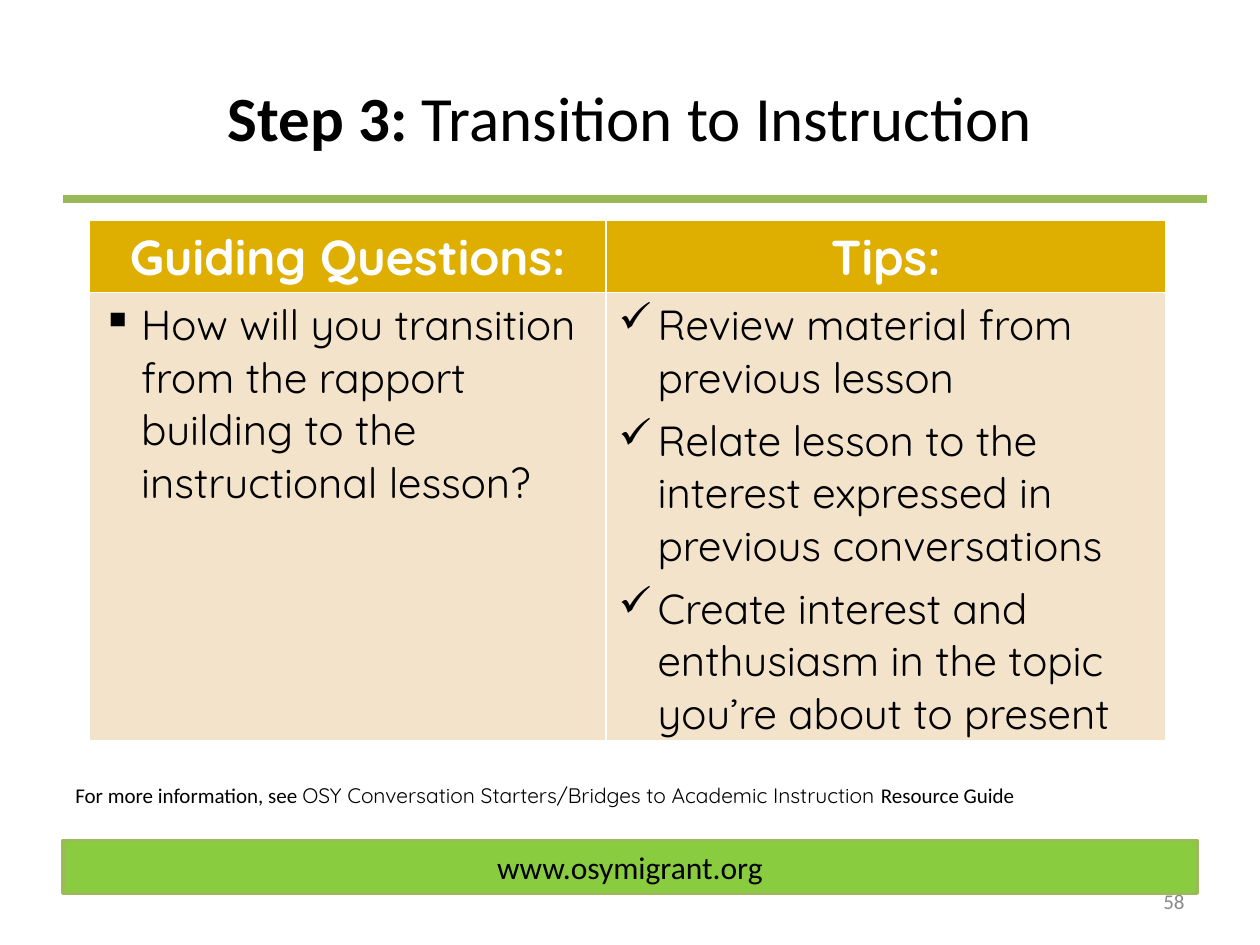
from lxml.etree import SubElement as Sub
from pptx import Presentation
from pptx.dml.color import RGBColor as RGB
from pptx.enum.shapes import MSO_CONNECTOR as Link, MSO_SHAPE as Shape
from pptx.enum.text import MSO_ANCHOR as Anchor, PP_ALIGN as Align
from pptx.oxml.ns import qn
from pptx.util import Inches, Pt

BLACK = RGB(0x00, 0x00, 0x00)
WHITE = RGB(0xFF, 0xFF, 0xFF)
GRAY = RGB(0x89, 0x89, 0x89)
RULE = RGB(0x98, 0xB9, 0x55)
GREEN = RGB(0x89, 0xCC, 0x40)
EDGE = RGB(0x9B, 0xBB, 0x59)
GOLD = RGB(0xDE, 0xAE, 0x00)
CREAM = RGB(0xF3, 0xE3, 0xCB)
SANS, ROUND = "Calibri", "Quicksand"
COLS, ROWS = 100, 75


class Deck:
    def __init__(self):
        self.prs = Presentation()
        self.prs.slide_width, self.prs.slide_height = Inches(10), Inches(7.5)
        self.slide = self.prs.slides.add_slide(self.prs.slide_layouts[5])
        self.shapes = self.slide.shapes

    def grid(self, x, y, w, h):
        dx, dy = self.prs.slide_width / COLS, self.prs.slide_height / ROWS
        return [round(n) for n in (x * dx, y * dy, w * dx, h * dy)]

    def style(self, para, size, color=BLACK, face=SANS, bold=False, align=None):
        para.alignment = align
        font = para.font
        font.size, font.name, font.bold = Pt(size), face, bold
        font.color.rgb = color

    def title(self, box, lead, rest):
        shape = self.shapes.title
        shape.left, shape.top, shape.width, shape.height = self.grid(*box)
        frame = shape.text_frame
        frame.vertical_anchor = Anchor.MIDDLE
        para = frame.paragraphs[0]
        self.style(para, 36, align=Align.CENTER)
        for text, bold in ((lead, True), (rest, False)):
            run = para.add_run()
            run.text, run.font.bold = text, bold

    def rule(self, x, y, w):
        left, top, width, _ = self.grid(x, y, w, 0)
        line = self.shapes.add_connector(Link.STRAIGHT, left, top, left + width, top)
        line.line.color.rgb, line.line.width = RULE, Pt(4.5)
        Sub(line.element.spPr, qn("a:effectLst"))

    def bar(self, box, text):
        shape = self.shapes.add_shape(Shape.RECTANGLE, *self.grid(*box))
        shape.shadow.inherit = False
        shape.fill.solid()
        shape.fill.fore_color.rgb = GREEN
        shape.line.color.rgb, shape.line.width = EDGE, Pt(2)
        shape.text_frame.text = text
        self.style(shape.text_frame.paragraphs[0], 18, align=Align.CENTER)

    def text(self, box, parts, color=BLACK, align=None, indent=0):
        frame = self.shapes.add_textbox(*self.grid(*box)).text_frame
        frame.word_wrap = True
        frame.vertical_anchor = Anchor.MIDDLE
        para = frame.paragraphs[0]
        if indent:
            para._p.get_or_add_pPr().set("marL", str(Inches(indent)))
        self.style(para, 12, color, align=align)
        for text, face in parts:
            run = para.add_run()
            run.text, run.font.name = text, face

    def bullet(self, para, mark):
        props = para._p.get_or_add_pPr()
        props.set("marL", str(Inches(0.31)))
        props.set("indent", str(-Inches(0.31)))
        Sub(props, qn("a:buChar")).set("char", mark)

    def cell(self, cell, lines, fill, mark=None):
        cell.fill.solid()
        cell.fill.fore_color.rgb = fill
        cell.text = "\n".join(lines)
        paras = cell.text_frame.paragraphs
        for para in paras:
            if mark:
                self.bullet(para, mark)
                self.style(para, 24, face=ROUND)
            else:
                self.style(para, 28, WHITE, ROUND, True, Align.CENTER)
        for para in paras[:-1]:
            para.space_after = Pt(6)

    def table(self, box, wide, high, lists):
        table = self.shapes.add_table(2, len(lists), *self.grid(*box)).table
        for row, size in zip(table.rows, high):
            row.height = self.grid(0, 0, 0, size)[3]
        for i, (head, mark, lines) in enumerate(lists):
            table.columns[i].width = self.grid(0, 0, wide[i], 0)[2]
            self.cell(table.cell(0, i), [head], GOLD)
            self.cell(table.cell(1, i), lines, CREAM, mark)


def main():
    deck = Deck()
    deck.title((5, 3, 90, 12.5), "Step 3: ", "Transition to Instruction")
    deck.text((71.7, 69.5, 23.3, 4), [("58", SANS)], GRAY, Align.RIGHT)
    deck.rule(5, 15.8, 90.8)
    deck.bar((5, 66.7, 90, 4.2), "www.osymigrant.org")
    deck.table((7.1, 17.5, 85.4, 41.3), (41, 44.4), (5.7, 35.6), [
        ("Guiding Questions:", "▪", [
            "How will you transition from the rapport building to the instructional lesson?"]),
        ("Tips:", "✓", [
            "Review material from previous lesson",
            "Relate lesson to the interest expressed in previous conversations",
            "Create interest and enthusiasm in the topic you’re about to present"]),
    ])
    deck.text((0, 61.6, 90.3, 3), [
        ("For more information, see ", SANS),
        ("OSY Conversation Starters/Bridges to Academic Instruction ", ROUND),
        ("Resource Guide", SANS)], indent=0.5)
    deck.prs.save("out.pptx")


if __name__ == "__main__":
    main()
